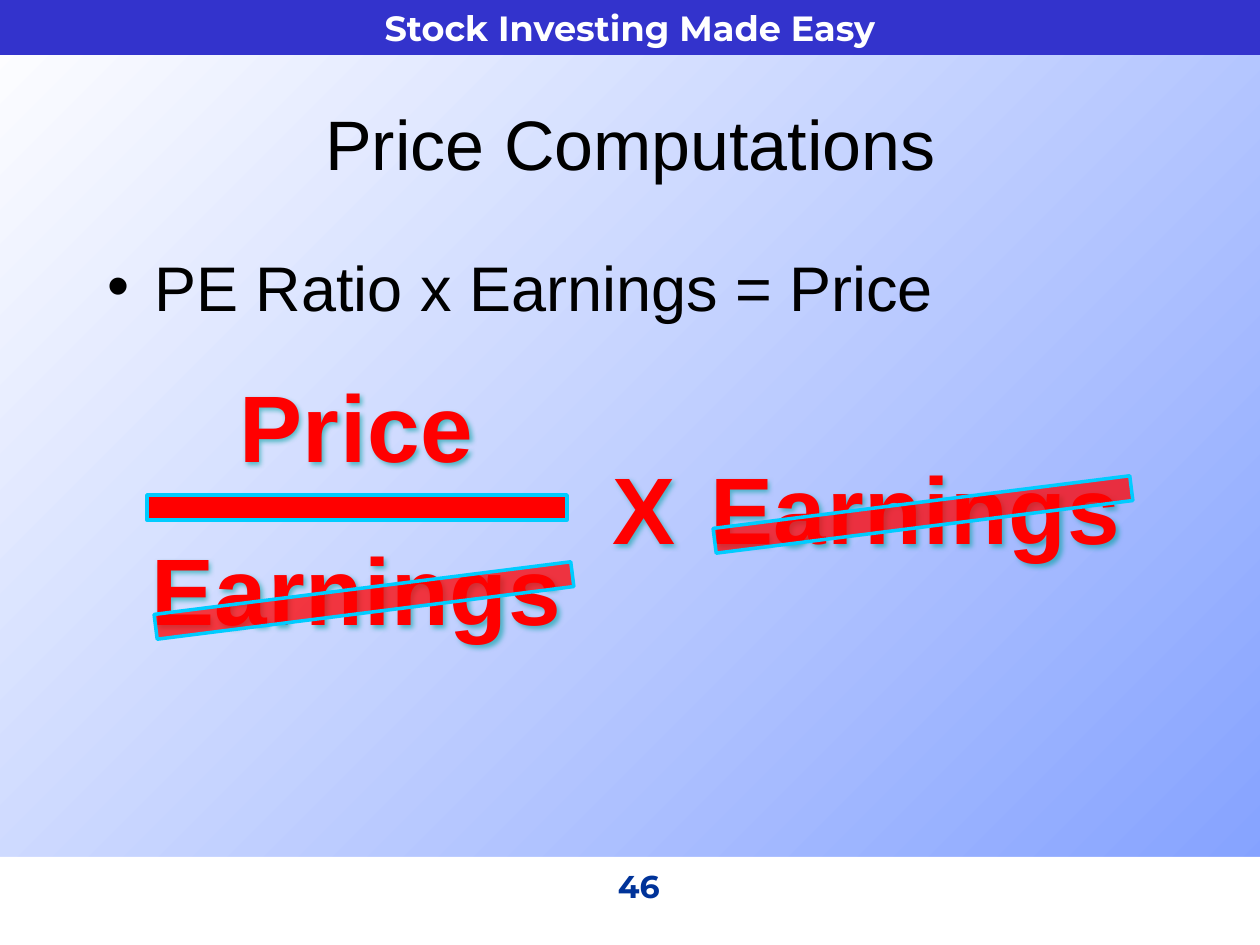
from lxml import etree
from pptx import Presentation
from pptx.dml.color import RGBColor
from pptx.enum.shapes import MSO_SHAPE
from pptx.enum.text import MSO_ANCHOR, MSO_AUTO_SIZE, PP_ALIGN
from pptx.oxml import parse_xml
from pptx.oxml.ns import qn
from pptx.util import Emu, Pt

RECTANGLE = MSO_SHAPE.RECTANGLE
MIDDLE, TOP = MSO_ANCHOR.MIDDLE, MSO_ANCHOR.TOP
FIT_SHAPE = MSO_AUTO_SIZE.SHAPE_TO_FIT_TEXT
CENTER, LEFT, RIGHT = PP_ALIGN.CENTER, PP_ALIGN.LEFT, PP_ALIGN.RIGHT
DRAWING_NS = "http://schemas.openxmlformats.org/drawingml/2006/main"
RED, CYAN = "FF0000", "00CCFF"
TITLE_ONLY = 5


def px(value):
    return Emu(round(value * 914400 / 126))


def rgb(code):
    return RGBColor.from_string(code)


def set_background(slide, start, end):
    fill = slide.background.fill
    fill.gradient()
    fill.gradient_angle = 315
    for stop, color in zip(fill.gradient_stops, (start, end)):
        stop.color.rgb = rgb(color)


def write(shape, text, size, color, font="Arial", bold=False, align=CENTER, anchor=TOP):
    frame = shape.text_frame
    frame.text = text
    frame.vertical_anchor = anchor
    paragraph = frame.paragraphs[0]
    paragraph.alignment = align
    run = paragraph.runs[0]
    run.font.name, run.font.size, run.font.bold = font, Pt(size), bold
    run.font.color.rgb = rgb(color)
    return run


def add_text(slide, box, text, size, color, **style):
    shape = slide.shapes.add_textbox(*map(px, box))
    shape.text_frame.word_wrap = True
    write(shape, text, size, color, **style)
    return shape


def add_bar(slide, box, color, line=None, rotation=0, opacity=100):
    shape = slide.shapes.add_shape(RECTANGLE, *map(px, box))
    shape.shadow.inherit = False
    shape.rotation = rotation
    shape.fill.solid()
    shape.fill.fore_color.rgb = rgb(color)
    if opacity < 100:
        fill_color = shape.fill._xPr.find(qn("a:solidFill"))[0]
        etree.SubElement(fill_color, qn("a:alpha"), val=str(opacity * 1000))
    if line:
        shape.line.color.rgb = rgb(line)
        shape.line.width = Pt(2)
    else:
        shape.line.fill.background()
    return shape


def add_bullet(shape, indent):
    properties = shape.text_frame.paragraphs[0]._p.get_or_add_pPr()
    properties.set("marL", str(px(indent)))
    properties.set("indent", str(-px(indent)))
    etree.SubElement(properties, qn("a:buFont"), typeface="Arial")
    etree.SubElement(properties, qn("a:buChar"), char="•")


def add_term(slide, box, text):
    """Large outlined word with a soft shadow."""
    shape = slide.shapes.add_textbox(*map(px, box))
    run = write(shape, text, 54, RED, bold=True)
    shape.text_frame.word_wrap = False
    shape.text_frame.auto_size = FIT_SHAPE
    properties = run._r.get_or_add_rPr()
    properties.set("spc", "50")
    properties.insert(0, parse_xml(
        f'<a:ln xmlns:a="{DRAWING_NS}" w="12700"><a:solidFill>'
        f'<a:srgbClr val="{CYAN}"/></a:solidFill></a:ln>'))
    shape._element.spPr.append(parse_xml(
        f'<a:effectLst xmlns:a="{DRAWING_NS}">'
        '<a:outerShdw blurRad="38100" dist="20320" dir="3000000" algn="tl">'
        '<a:srgbClr val="00A0A0"><a:alpha val="60000"/></a:srgbClr>'
        '</a:outerShdw></a:effectLst>'))


def add_strike(slide, left, top):
    add_bar(slide, (left, top, 420, 25), RED, CYAN, rotation=352.8, opacity=75)


def main():
    presentation = Presentation()
    presentation.slide_width, presentation.slide_height = px(1260), px(945)
    slide = presentation.slides.add_slide(presentation.slide_layouts[TITLE_ONLY])
    set_background(slide, "FFFFFF", "819FFF")

    # Footer and header bands
    add_bar(slide, (0, 857, 1260, 88), "FFFFFF")
    header = add_bar(slide, (0, 0, 1260, 55), "3333CC")
    write(header, "Stock Investing Made Easy", 20, "FFFFFF",
          font="Montserrat", bold=True, anchor=MIDDLE)

    # Title, formula and page number
    title = slide.shapes.title
    title.left, title.top, title.width, title.height = map(px, (95, 63, 1071, 158))
    write(title, "Price Computations", 40, "000000", anchor=MIDDLE)
    formula = add_text(slide, (95, 242, 1071, 546), "PE Ratio x Earnings = Price",
                       36, "000000", align=LEFT)
    add_bullet(formula, 47)
    add_text(slide, (410, 861, 262, 63), "46", 18, "003399",
             font="Montserrat", bold=True, align=RIGHT)

    # Fraction multiplied by earnings
    add_term(slide, (225, 362, 263, 127), "Price")
    add_term(slide, (136, 525, 441, 127), "Earnings")
    add_bar(slide, (147, 495, 420, 25), RED, CYAN)
    add_term(slide, (600, 444, 89, 127), "X")
    add_term(slide, (695, 444, 441, 127), "Earnings")

    # Cancelled terms
    add_strike(slide, 154, 588)
    add_strike(slide, 713, 502)

    presentation.save("out.pptx")


if __name__ == "__main__":
    main()
